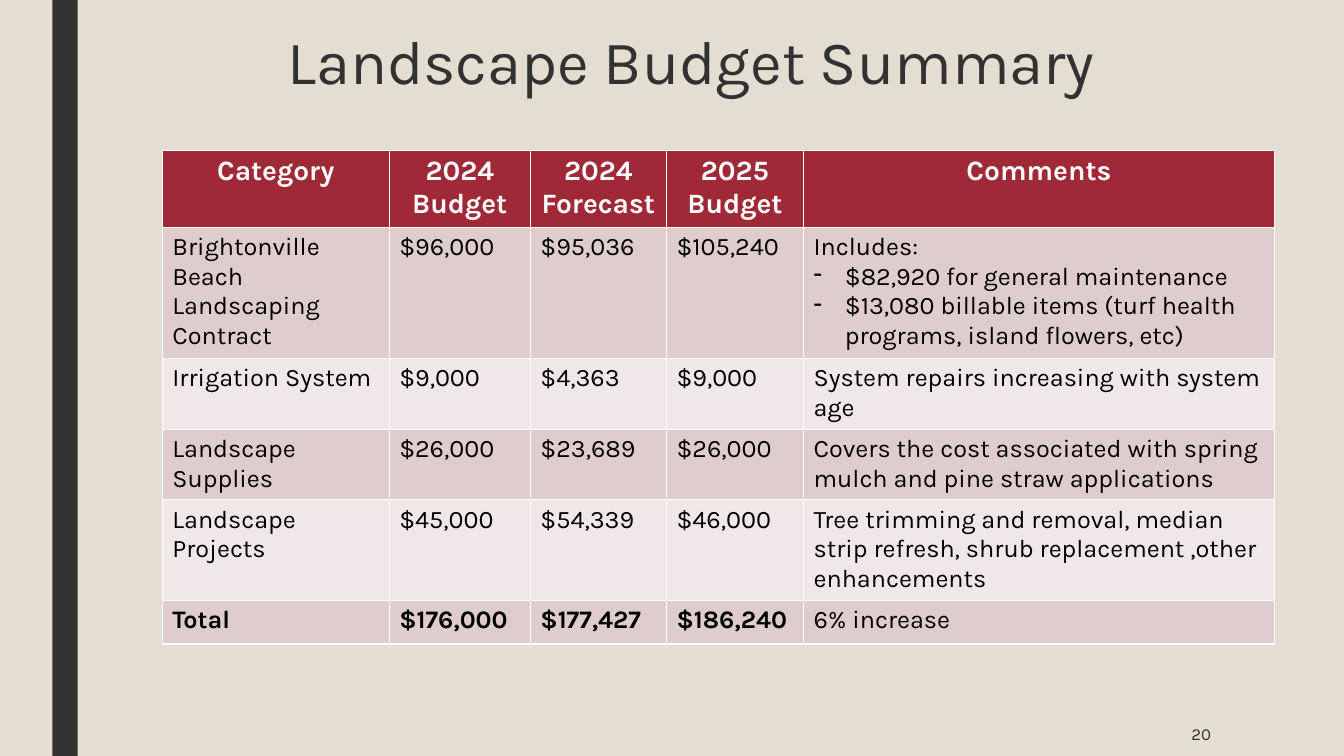
from lxml.etree import SubElement
from pptx import Presentation
from pptx.dml.color import RGBColor
from pptx.enum.shapes import MSO_SHAPE
from pptx.enum.text import MSO_ANCHOR, PP_ALIGN
from pptx.oxml.ns import qn
from pptx.util import Pt

EMU_PER_PX = 9144
FONT = "Karla"
COLORS = {
    "background": "E3DED1",
    "charcoal": "323232",
    "header": "9F2936",
    "band_dark": "DFCDCE",
    "band_light": "F0E8E8",
    "white": "FFFFFF",
    "black": "000000",
}
COLUMN_WIDTHS = [225, 140, 135, 136, 467]
ROW_HEIGHTS = [68, 85, 43, 60, 60, 43]
BULLET = "- "
BUDGET = [
    ["Category", "2024 Budget", "2024 Forecast", "2025 Budget", "Comments"],
    ["Brightonville Beach Landscaping Contract", "$96,000", "$95,036", "$105,240",
     ["Includes:",
      "- $82,920 for general maintenance",
      "- $13,080 billable items (turf health programs, island flowers, etc)"]],
    ["Irrigation System", "$9,000", "$4,363", "$9,000",
     "System repairs increasing with system age"],
    ["Landscape Supplies", "$26,000", "$23,689", "$26,000",
     "Covers the cost associated with spring mulch and pine straw applications"],
    ["Landscape Projects", "$45,000", "$54,339", "$46,000",
     "Tree trimming and removal, median strip refresh, shrub replacement ,other enhancements"],
    ["Total", "$176,000", "$177,427", "$186,240", "6% increase"],
]


def px(length):
    return length * EMU_PER_PX


def color(name):
    return RGBColor.from_string(COLORS[name])


def add_run(paragraph, text, size, ink, bold=False):
    run = paragraph.add_run()
    run.text = text
    run.font.name = FONT
    run.font.size = Pt(size)
    run.font.bold = bold
    run.font.color.rgb = color(ink)


def add_dash(paragraph, indent):
    properties = paragraph._p.get_or_add_pPr()
    properties.set("marL", str(px(indent)))
    properties.set("indent", str(-px(indent)))
    SubElement(properties, qn("a:buChar")).set("char", BULLET.strip())


def add_side_bar(slide, left, top, width, height):
    bar = slide.shapes.add_shape(
        MSO_SHAPE.RECTANGLE, px(left), px(top), px(width), px(height))
    bar.shadow.inherit = False
    bar.fill.solid()
    bar.fill.fore_color.rgb = color("charcoal")
    bar.line.fill.background()


def place_title(slide, left, top, width, height):
    title = slide.shapes.title
    title.left, title.top = px(left), px(top)
    title.width, title.height = px(width), px(height)
    heading = title.text_frame.paragraphs[0]
    heading.alignment = PP_ALIGN.CENTER
    heading.line_spacing = 0.89
    add_run(heading, "Landscape Budget Summary", 44, "charcoal")


def add_page_number(slide, left, top, width, height):
    frame = slide.shapes.add_textbox(
        px(left), px(top), px(width), px(height)).text_frame
    frame.word_wrap = True
    frame.vertical_anchor = MSO_ANCHOR.MIDDLE
    number = frame.paragraphs[0]
    number.alignment = PP_ALIGN.RIGHT
    add_run(number, "20", 12, "charcoal")


def fill_cell(cell, content, row, column):
    is_header = row == 0
    is_total = row == len(BUDGET) - 1
    band = "header" if is_header else "band_dark" if row % 2 else "band_light"
    cell.fill.solid()
    cell.fill.fore_color.rgb = color(band)
    lines = content if isinstance(content, list) else [content]
    for index, line in enumerate(lines):
        frame = cell.text_frame
        paragraph = frame.add_paragraph() if index else frame.paragraphs[0]
        if is_header:
            paragraph.alignment = PP_ALIGN.CENTER
            add_run(paragraph, line, 20, "white", True)
            continue
        if line.startswith(BULLET):
            add_dash(paragraph, 31)
        is_bold = is_total and column < len(COLUMN_WIDTHS) - 1
        add_run(paragraph, line.removeprefix(BULLET), 18, "black", is_bold)


def add_budget_table(slide, left, top, width, height):
    budget_frame = slide.shapes.add_table(
        len(ROW_HEIGHTS), len(COLUMN_WIDTHS),
        px(left), px(top), px(width), px(height))
    table = budget_frame.table
    for column, column_width in zip(table.columns, COLUMN_WIDTHS):
        column.width = px(column_width)
    for row, row_height in zip(table.rows, ROW_HEIGHTS):
        row.height = px(row_height)
    budget_frame.height = px(height)
    for row, entries in enumerate(BUDGET):
        for column, content in enumerate(entries):
            fill_cell(table.cell(row, column), content, row, column)


def build_budget_slide(presentation, width, height):
    presentation.slide_width, presentation.slide_height = px(width), px(height)
    slide = presentation.slides.add_slide(presentation.slide_layouts[5])
    slide.background.fill.solid()
    slide.background.fill.fore_color.rgb = color("background")
    add_side_bar(slide, 52, 0, 25, height)
    place_title(slide, 161, 24, 1050, 80)
    add_page_number(slide, 1036, 706, 175, 44)
    add_budget_table(slide, 161, 149, sum(COLUMN_WIDTHS), 463)


def main():
    presentation = Presentation()
    build_budget_slide(presentation, 1333, 750)
    presentation.save("out.pptx")


if __name__ == "__main__":
    main()
